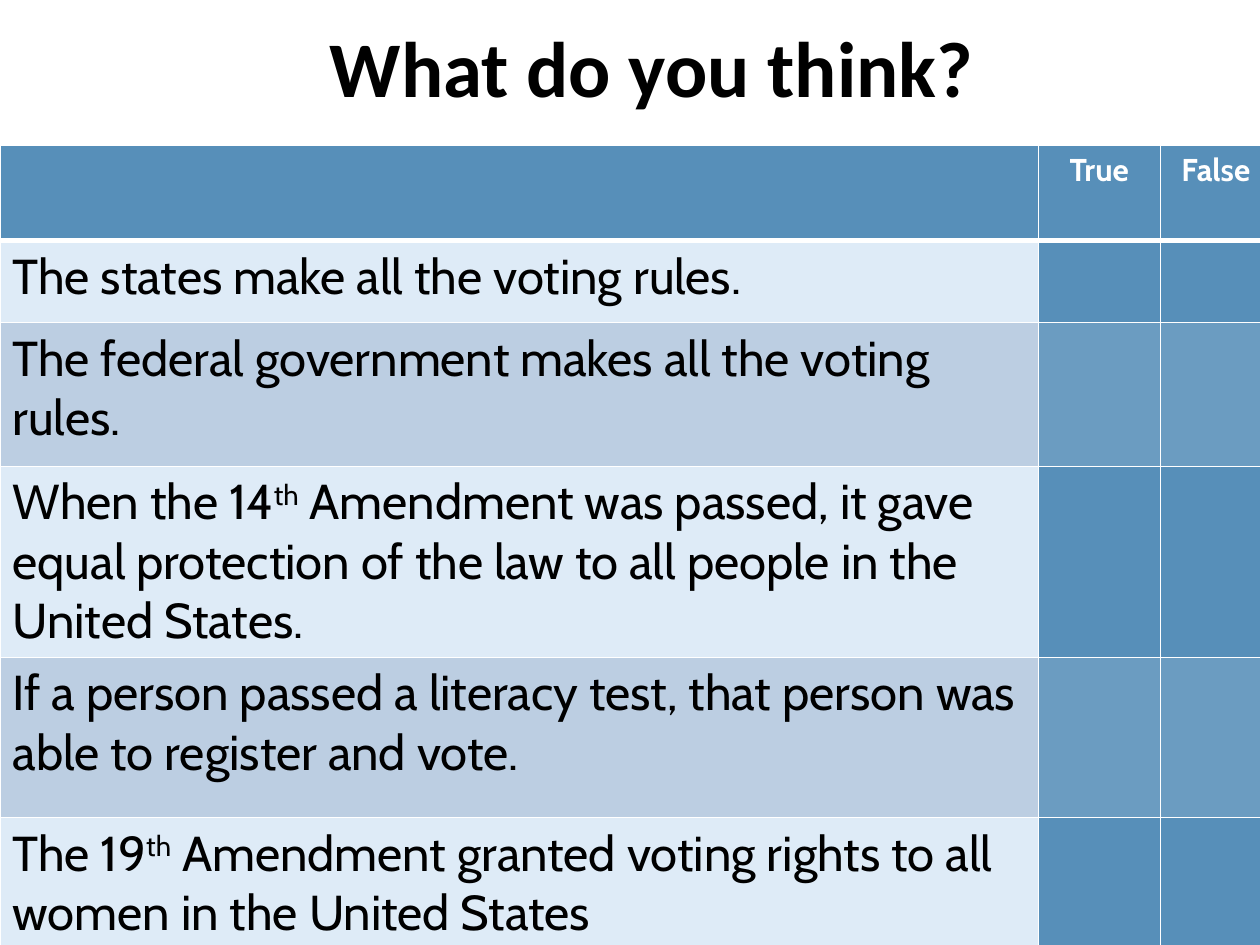
from dataclasses import dataclass

from lxml.etree import SubElement
from pptx import Presentation
from pptx.dml.color import RGBColor
from pptx.enum.text import MSO_ANCHOR, MSO_AUTO_SIZE, PP_ALIGN
from pptx.oxml.ns import qn
from pptx.util import Cm, Pt


@dataclass(frozen=True)
class Theme:
    title_font: str = "Calibri"
    body_font: str = "Cabin"
    title_size: int = 45
    header_size: int = 18
    statement_size: int = 28
    black: str = "000000"
    white: str = "FFFFFF"
    header_fill: str = "578FB9"
    statement_fills: tuple = ("DEEBF7", "BCCEE2")
    answer_fills: tuple = ("578FB9", "6B9CC1")
    thin_line: int = 1
    header_line: int = 3


THEME = Theme()

COLUMN_WIDTHS = (20.93, 2.46, 2.24)
ROW_HEIGHTS = (1.93, 1.65, 2.9, 3.81, 3.23, 3.0)
HEADINGS = ("", "True", "False")

# Each statement is a list of parts; every second part is raised
STATEMENTS = (
    ["The states make all the voting rules."],
    ["The federal government makes all the voting rules."],
    ["When the 14", "th", " Amendment was passed, it gave equal protection "
     "of the law to all people in the United States."],
    ["If a person passed a literacy test, that person was able to register "
     "and vote."],
    ["The 19", "th", " Amendment granted voting rights to all women in the "
     "United States"],
)


def add_span(para, text, *, font, size, color, bold=False, raised=False):
    """Add one formatted run to a paragraph."""
    span = para.add_run()
    span.text = text
    span.font.name = font
    span.font.size = Pt(size)
    span.font.bold = bold
    span.font.color.rgb = RGBColor.from_string(color)
    if raised:
        span.font._element.set("baseline", "30000")


def style_cell(cell, fill, top=THEME.thin_line, bottom=THEME.thin_line):
    """Give a cell white borders, then its fill."""
    properties = cell._tc.get_or_add_tcPr()
    widths = {"L": THEME.thin_line, "R": THEME.thin_line,
              "T": top, "B": bottom}
    for side, width in widths.items():
        line = SubElement(properties, qn(f"a:ln{side}"), w=str(Pt(width)))
        solid = SubElement(line, qn("a:solidFill"))
        SubElement(solid, qn("a:srgbClr"), val=THEME.white)
    cell.fill.solid()
    cell.fill.fore_color.rgb = RGBColor.from_string(fill)


def set_title(page, text):
    title = page.shapes.title
    title.left, title.top = Cm(3.61), Cm(0.43)
    title.width, title.height = Cm(19.05), Cm(2.01)
    frame = title.text_frame
    frame.word_wrap = True
    frame.auto_size = MSO_AUTO_SIZE.NONE
    frame.vertical_anchor = MSO_ANCHOR.BOTTOM
    para = frame.paragraphs[0]
    para.alignment = PP_ALIGN.CENTER
    para.line_spacing = 0.9
    add_span(para, text, font=THEME.title_font, size=THEME.title_size,
             color=THEME.black, bold=True)


def add_quiz_table(page):
    table = page.shapes.add_table(
        len(ROW_HEIGHTS), len(COLUMN_WIDTHS), Cm(0), Cm(2.92),
        Cm(sum(COLUMN_WIDTHS)), Cm(sum(ROW_HEIGHTS))).table
    for column, width in zip(table.columns, COLUMN_WIDTHS):
        column.width = Cm(width)
    for row, height in zip(table.rows, ROW_HEIGHTS):
        row.height = Cm(height)

    # Header row
    for cell, heading in zip(table.rows[0].cells, HEADINGS):
        style_cell(cell, THEME.header_fill, bottom=THEME.header_line)
        if heading:
            para = cell.text_frame.paragraphs[0]
            para.alignment = PP_ALIGN.CENTER
            add_span(para, heading, font=THEME.body_font,
                     size=THEME.header_size, color=THEME.white, bold=True)

    # Statements with empty answer cells, in alternating shades
    for index, parts in enumerate(STATEMENTS):
        top = THEME.thin_line if index else THEME.header_line
        statement, *answers = table.rows[index + 1].cells
        style_cell(statement, THEME.statement_fills[index % 2], top=top)
        for answer in answers:
            style_cell(answer, THEME.answer_fills[index % 2], top=top)
        para = statement.text_frame.paragraphs[0]
        for position, part in enumerate(parts):
            add_span(para, part, font=THEME.body_font,
                     size=THEME.statement_size, color=THEME.black,
                     raised=position % 2 == 1)


def main():
    deck = Presentation()
    deck.slide_width, deck.slide_height = Cm(25.4), Cm(19.05)
    page = deck.slides.add_slide(deck.slide_layouts[0])
    subtitle = page.placeholders[1].element
    subtitle.getparent().remove(subtitle)

    set_title(page, "What do you think?")
    add_quiz_table(page)
    deck.save("out.pptx")


if __name__ == "__main__":
    main()
